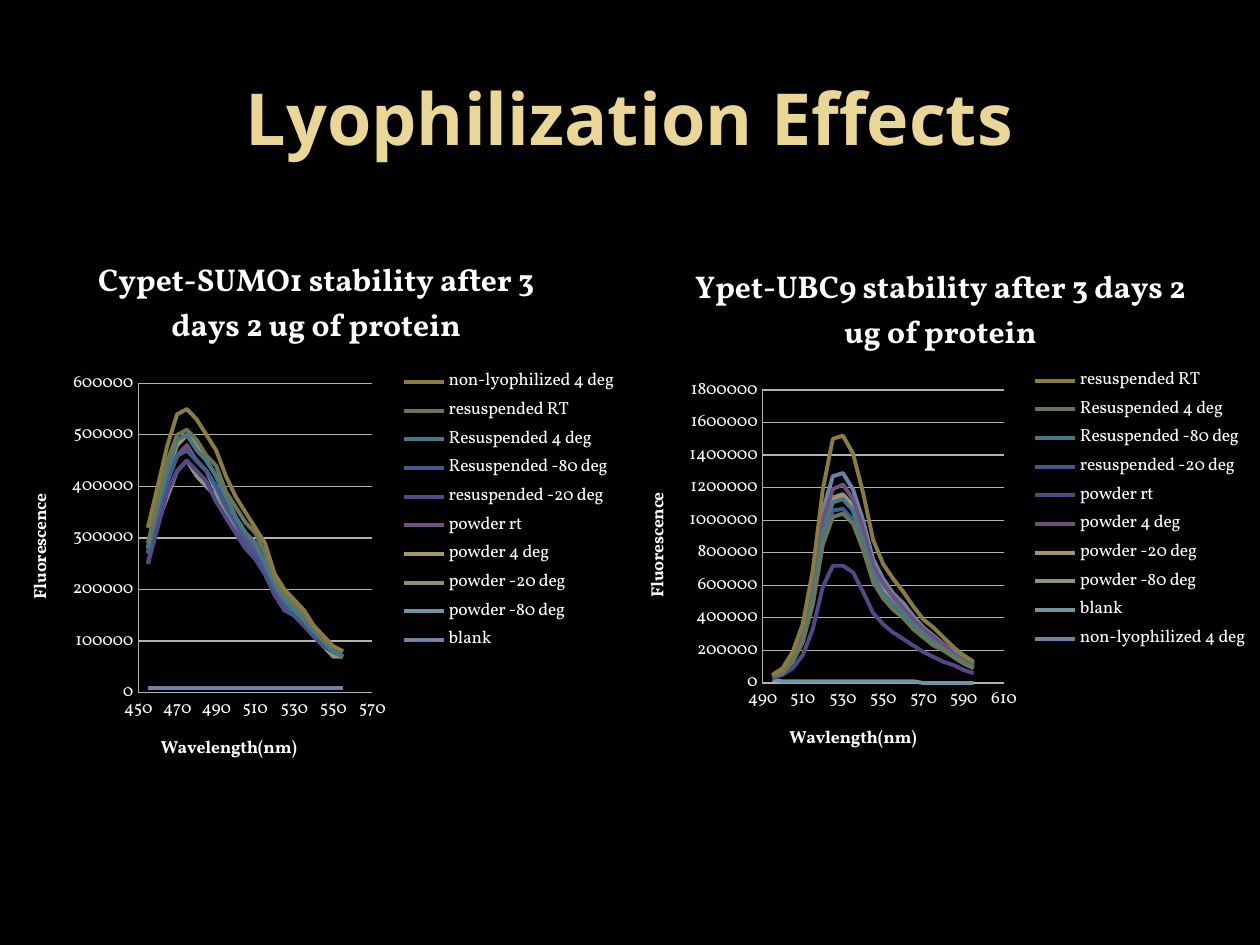
from pptx import Presentation
from pptx.chart.data import XyChartData
from pptx.dml.color import RGBColor as RGB
from pptx.enum.chart import XL_CHART_TYPE as Kind, XL_LEGEND_POSITION as Side
from pptx.enum.chart import XL_TICK_MARK as Tick
from pptx.enum.text import MSO_ANCHOR as Anchor, PP_ALIGN as Align
from pptx.util import Pt

BLACK = RGB(0x00, 0x00, 0x00)
WHITE = RGB(0xFF, 0xFF, 0xFF)
GOLD = RGB(0xEA, 0xD6, 0x96)
GRID = RGB(0xB3, 0xB3, 0xB3)
# One colour for each series, in order
LINES = [
    RGB(0x8A, 0x7B, 0x43), RGB(0x68, 0x76, 0x58), RGB(0x47, 0x77, 0x87),
    RGB(0x43, 0x59, 0x8B), RGB(0x54, 0x47, 0x87), RGB(0x6D, 0x50, 0x7D),
    RGB(0xA5, 0x95, 0x6B), RGB(0x8A, 0x93, 0x7C), RGB(0x70, 0x94, 0xA0),
    RGB(0x70, 0x80, 0xA7),
]

STEP = 5          # nm between readings
UNIT = 10000      # readings below are in tens of thousands

CYPET = {
    "non-lyophilized 4 deg": [32, 40, 48, 54, 55, 53, 50, 47, 42, 38, 35,
                              32, 29, 23, 20, 18, 16, 13, 11, 9, 8],
    "resuspended RT": [29, 37, 45, 50, 51, 49, 46, 44, 39, 36, 33,
                       31, 27, 22, 19, 17, 15, 13, 10, 9, 8],
    "Resuspended 4 deg": [28, 36, 43, 49, 50, 47, 45, 42, 38, 34, 31,
                          29, 25, 21, 18, 16, 14, 12, 10, 8, 7],
    "Resuspended -80 deg": [27, 35, 41, 46, 47, 45, 43, 40, 36, 33, 29,
                            27, 24, 20, 17, 15, 14, 11, 9, 8, 7],
    "resuspended -20 deg": [25, 32, 39, 43, 45, 43, 41, 37, 34, 31, 28,
                            26, 23, 19, 16, 15, 13, 11, 9, 8, 7],
    "powder rt": [27, 36, 41, 46, 48, 45, 43, 40, 36, 33, 30,
                  28, 25, 20, 18, 16, 14, 12, 9, 8, 7],
    "powder 4 deg": [28, 37, 43, 48, 50, 48, 45, 42, 38, 34, 31,
                     29, 25, 21, 18, 16, 14, 12, 10, 8, 7],
    "powder -20 deg": [25, 33, 38, 43, 45, 42, 40, 38, 34, 31, 28,
                       26, 23, 19, 16, 15, 13, 11, 9, 7, 7],
    "powder -80 deg": [27, 35, 41, 46, 47, 45, 43, 39, 35, 32, 29,
                       27, 24, 19, 17, 15, 13, 11, 9, 8, 7],
    "blank": [1] * 21,
}
YPET = {
    "resuspended RT": [5, 9, 19, 36, 69, 119, 150, 152, 141, 117, 88,
                       73, 64, 56, 47, 39, 34, 28, 22, 17, 13],
    "Resuspended 4 deg": [4, 6, 13, 25, 48, 85, 102, 104, 98, 82, 62,
                          52, 45, 40, 33, 28, 23, 20, 16, 12, 9],
    "Resuspended -80 deg": [4, 6, 14, 27, 53, 92, 111, 113, 106, 87, 67,
                            55, 49, 43, 36, 30, 25, 21, 17, 13, 10],
    "resuspended -20 deg": [4, 6, 13, 26, 50, 87, 106, 107, 100, 83, 63,
                            52, 46, 40, 34, 28, 24, 20, 16, 12, 9],
    "powder rt": [3, 5, 9, 17, 33, 59, 72, 72, 68, 56, 43,
                  36, 31, 27, 23, 19, 16, 13, 11, 8, 6],
    "powder 4 deg": [4, 7, 15, 30, 57, 100, 119, 122, 113, 95, 72,
                     61, 53, 46, 39, 33, 28, 24, 18, 14, 11],
    "powder -20 deg": [4, 7, 14, 28, 54, 95, 112, 115, 106, 88, 67,
                       56, 49, 43, 36, 30, 25, 22, 17, 13, 10],
    "powder -80 deg": [4, 7, 14, 28, 53, 95, 114, 116, 109, 92, 70,
                       58, 52, 45, 38, 31, 26, 22, 18, 13, 11],
    "blank": [2] + [1] * 14 + [0] * 6,
    "non-lyophilized 4 deg": [4, 8, 16, 32, 62, 106, 127, 129, 119, 100, 76,
                              64, 55, 49, 41, 34, 29, 24, 19, 15, 12],
}


def add_run(frame, text, size, font, color):
    """Add one bold run to the first paragraph of a text frame."""
    run = frame.paragraphs[0].add_run()
    run.text = text
    face = run.font
    face.size, face.name, face.bold = Pt(size), font, True
    face.color.rgb = color


def add_title(slide, text):
    """Place and fill the title placeholder."""
    title = slide.shapes.title
    title.left, title.top = Pt(36), Pt(21.6)
    title.width, title.height = Pt(648), Pt(90)
    frame = title.text_frame
    frame.vertical_anchor = Anchor.MIDDLE
    frame.paragraphs[0].alignment = Align.CENTER
    add_run(frame, text, 41, "Open Sans", GOLD)


def set_axis(axis, text, grid):
    """Give an axis its title, line and grid."""
    add_run(axis.axis_title.text_frame, text, 10, "Vollkorn", WHITE)
    axis.major_tick_mark = axis.minor_tick_mark = Tick.NONE
    axis.has_major_gridlines = grid
    rules = [axis.format.line]
    if grid:
        rules.append(axis.major_gridlines.format.line)
    for rule in rules:
        rule.color.rgb = GRID
        rule.width = Pt(0.75)


def add_curves(slide, box, head, label, low, high, top, unit, data):
    """Add a smooth scatter chart of emission spectra."""
    source = XyChartData(number_format="General")
    for name, marks in data.items():
        series = source.add_series(name)
        for i, mark in enumerate(marks):
            series.add_data_point(low + STEP * (i + 1), mark * UNIT)
    chart = slide.shapes.add_chart(
        Kind.XY_SCATTER_SMOOTH_NO_MARKERS, *map(Pt, box), source).chart
    chart.font.size, chart.font.name = Pt(10), "Vollkorn"
    chart.font.color.rgb = WHITE
    add_run(chart.chart_title.text_frame, head, 18, "Vollkorn", WHITE)
    chart.chart_title.include_in_layout = False

    # Axes
    wave, glow = chart.category_axis, chart.value_axis
    set_axis(wave, label, False)
    set_axis(glow, "Fluorescence", True)
    wave.minimum_scale, wave.maximum_scale, wave.major_unit = low, high, 20
    glow.minimum_scale, glow.maximum_scale, glow.major_unit = 0, top, unit

    # Legend
    chart.has_legend = True
    chart.legend.position = Side.RIGHT
    chart.legend.include_in_layout = False

    # Curves
    plot = chart.plots[0]
    plot.vary_by_categories = False
    for series, color in zip(plot.series, LINES):
        series.smooth = True
        series.format.line.width = Pt(2.25)
        series.format.line.color.rgb = color


def main():
    deck = Presentation()
    deck.slide_width, deck.slide_height = Pt(720), Pt(540)
    slide = deck.slides.add_slide(deck.slide_layouts[5])
    fill = slide.background.fill
    fill.solid()
    fill.fore_color.rgb = BLACK

    add_title(slide, "Lyophilization Effects")
    add_curves(slide, (1.5, 134, 358.5, 316),
               "Cypet-SUMO1 stability after 3 days 2 ug of protein",
               "Wavelength(nm)", 450, 570, 600000, 100000, CYPET)
    add_curves(slide, (354.25, 138.25, 366.5, 306),
               "Ypet-UBC9 stability after 3 days 2 ug of protein",
               "Wavlength(nm)", 490, 610, 1800000, 200000, YPET)
    deck.save("out.pptx")


if __name__ == "__main__":
    main()
